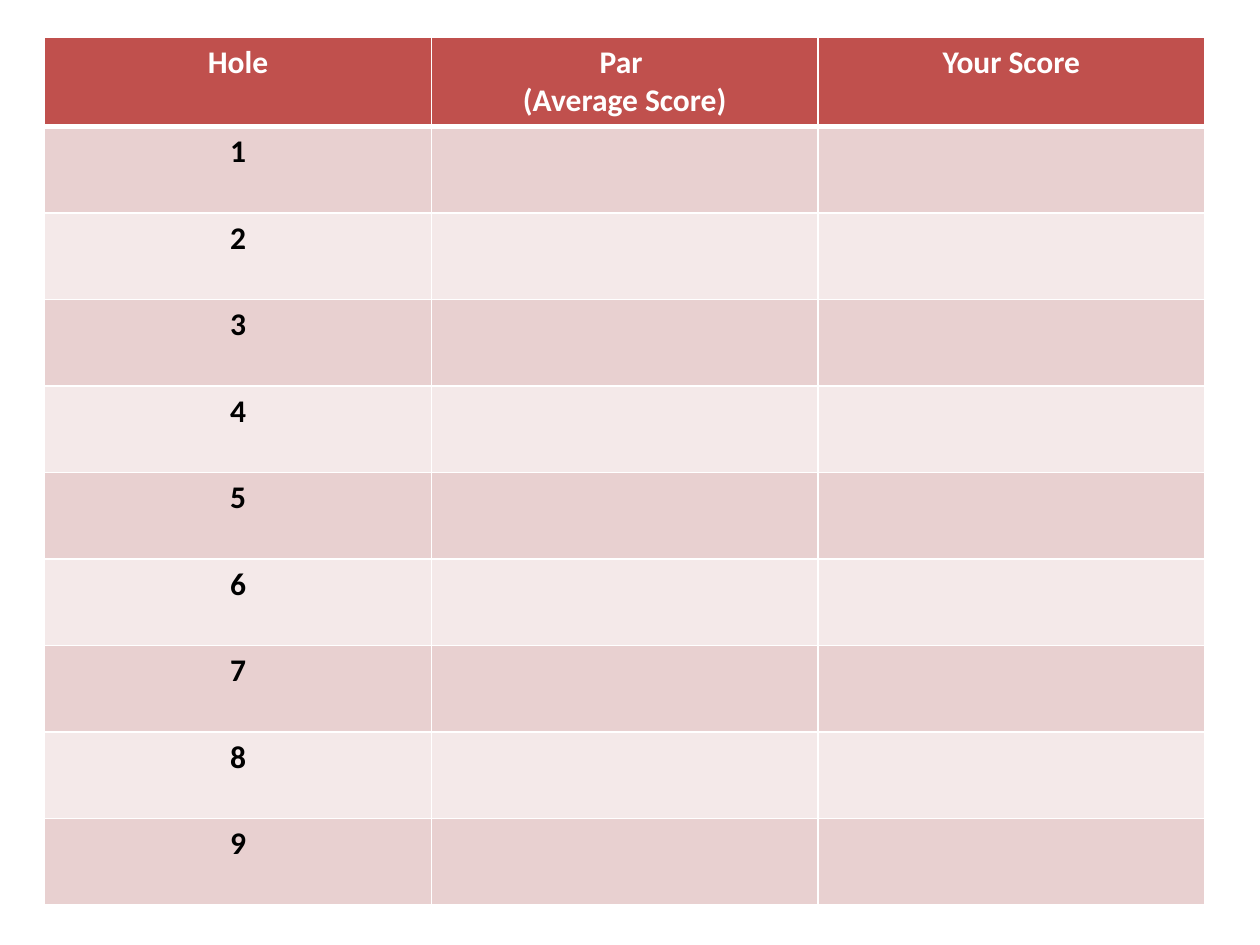
from lxml import etree
from pptx import Presentation
from pptx.dml.color import RGBColor
from pptx.enum.text import PP_ALIGN
from pptx.oxml.ns import qn
from pptx.util import Pt

CENTER = PP_ALIGN.CENTER
WHITE = RGBColor(0xFF, 0xFF, 0xFF)
BLACK = RGBColor(0x00, 0x00, 0x00)
HEADER_RED = RGBColor(0xC0, 0x50, 0x4D)
DARK_BAND = RGBColor(0xE8, 0xD0, 0xD0)
LIGHT_BAND = RGBColor(0xF4, 0xE9, 0xE9)

FONT = "Calibri"
HEADINGS = ["Hole", "Par \n(Average Score)", "Your Score"]
HOLE_COUNT = 9
THIN, THICK = Pt(1), Pt(3)


def set_borders(cell, top, bottom):
    """Draw white borders, with thin sides and the given top and bottom."""
    properties = cell._tc.get_or_add_tcPr()
    for side, width in (("L", THIN), ("R", THIN), ("T", top), ("B", bottom)):
        line = etree.SubElement(properties, qn(f"a:ln{side}"), w=str(width))
        fill = etree.SubElement(line, qn("a:solidFill"))
        etree.SubElement(fill, qn("a:srgbClr"), val=str(WHITE))


def fill_cell(cell, text, fill_color, text_color):
    cell.fill.solid()
    cell.fill.fore_color.rgb = fill_color
    cell.text_frame.text = text
    for paragraph in cell.text_frame.paragraphs:
        paragraph.alignment = CENTER
        paragraph.font.size = Pt(18)
        for run in paragraph.runs:
            run.font.name = FONT
            run.font.size = Pt(18)
            run.font.bold = True
            run.font.color.rgb = text_color


def add_scorecard(slide, left, top, width, height):
    """Place a header row and one row for each hole in the given box."""
    rows = [HEADINGS] + [[str(hole), "", ""] for hole in range(1, HOLE_COUNT + 1)]
    table = slide.shapes.add_table(
        len(rows), len(HEADINGS), left, top, width, height
    ).table

    for row_index, texts in enumerate(rows):
        is_header = row_index == 0
        if is_header:
            fill_color = HEADER_RED
        else:
            fill_color = DARK_BAND if row_index % 2 else LIGHT_BAND
        for column_index, text in enumerate(texts):
            cell = table.cell(row_index, column_index)
            # The header and the first hole share a thick line
            set_borders(
                cell,
                top=THICK if row_index == 1 else THIN,
                bottom=THICK if is_header else THIN,
            )
            fill_cell(cell, text, fill_color, WHITE if is_header else BLACK)


def main():
    presentation = Presentation()
    presentation.slide_width, presentation.slide_height = Pt(720), Pt(540)
    slide = presentation.slides.add_slide(presentation.slide_layouts[6])
    add_scorecard(slide, Pt(25.5), Pt(21), Pt(663), Pt(494.5))
    presentation.save("out.pptx")


if __name__ == "__main__":
    main()
